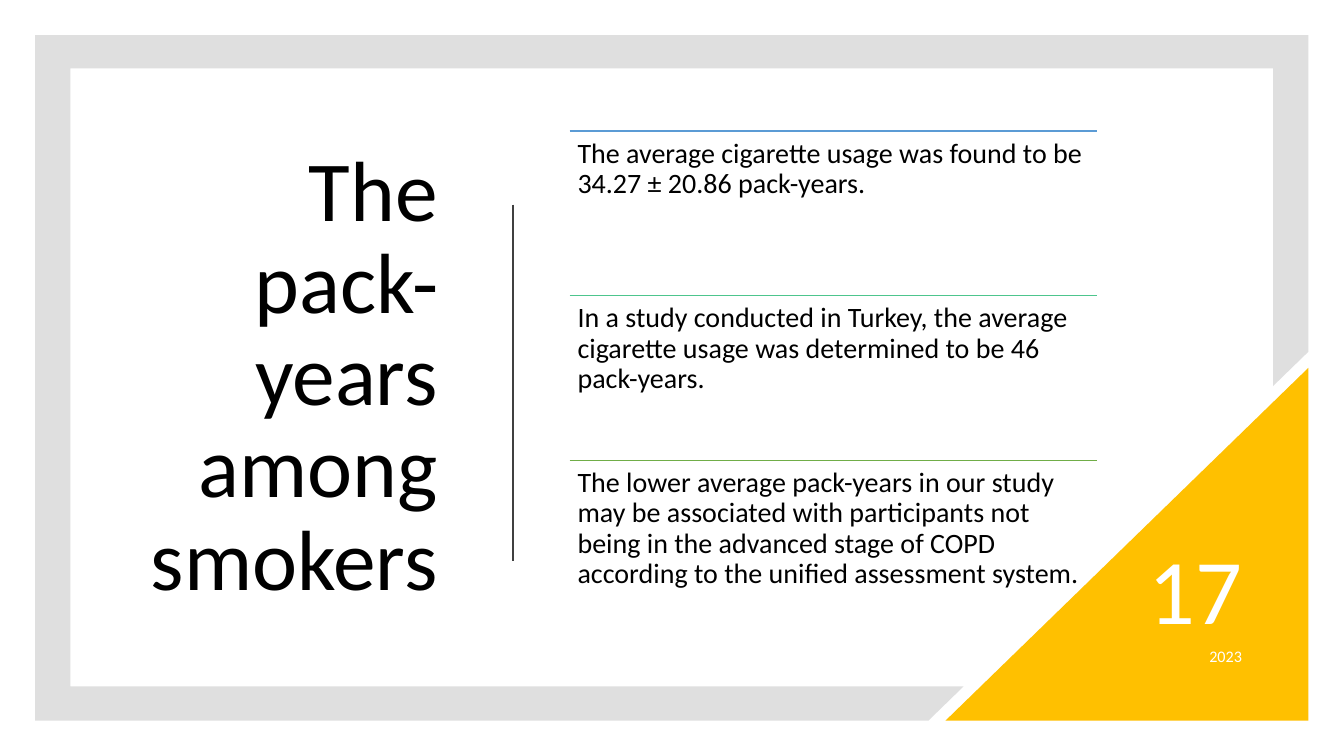
from pptx import Presentation, util as u
from pptx.dml.color import RGBColor
from pptx.enum import shapes, text
from pptx.oxml.ns import qn
from lxml import etree

CELL = u.Inches(0.1)
COLUMNS, ROWS = 133.33, 75


def cells(*counts):
    return [round(count * CELL) for count in counts]


def colour(code):
    return RGBColor.from_string(code)


class Deck:
    font = "Calibri"
    ink = "000000"
    paper = "FFFFFF"

    def __init__(self):
        self.file = Presentation()
        self.file.slide_width, self.file.slide_height = cells(COLUMNS, ROWS)
        self.slide = self.file.slides.add_slide(self.file.slide_layouts[6])

    def paint(self, shape, fill, opacity=100):
        shape.shadow.inherit = False
        shape.line.fill.background()
        shape.fill.solid()
        shape.fill.fore_color.rgb = colour(fill)
        if opacity < 100:
            tint = shape.fill._xPr.find(qn("a:solidFill"))[0]
            etree.SubElement(tint, qn("a:alpha")).set("val", str(opacity * 1000))

    def outline(self, points, fill, opacity):
        corners = [cells(*point) for point in points]
        builder = self.slide.shapes.build_freeform(*corners[0])
        builder.add_line_segments(corners[1:], close=True)
        self.paint(builder.convert_to_shape(), fill, opacity)

    def corner(self, left, top, width, height, fill):
        triangle = self.slide.shapes.add_shape(
            shapes.MSO_SHAPE.RIGHT_TRIANGLE, *cells(left, top, width, height))
        triangle._element.spPr.find(qn("a:xfrm")).set("flipH", "1")
        self.paint(triangle, fill)

    def rule(self, x1, y1, x2, y2, stroke, weight):
        line = self.slide.shapes.add_connector(
            shapes.MSO_CONNECTOR.STRAIGHT, *cells(x1, y1, x2, y2))
        line.line.color.rgb = colour(stroke)
        line.line.width = u.Pt(weight)
        etree.SubElement(line._element.spPr, qn("a:effectLst"))

    def words(self, content, left, top, width, height, size, ink=ink,
              align=text.PP_ALIGN.RIGHT, anchor=text.MSO_ANCHOR.MIDDLE,
              spacing=0.9, inset=None):
        frame = self.slide.shapes.add_textbox(
            *cells(left, top, width, height)).text_frame
        frame.word_wrap = True
        frame.vertical_anchor = anchor
        if inset is not None:
            frame.margin_left, frame.margin_top = cells(inset, inset)
            frame.margin_right, frame.margin_bottom = cells(inset, inset)
        frame.text = content
        paragraph = frame.paragraphs[0]
        paragraph.alignment = align
        paragraph.line_spacing = spacing
        font = paragraph.runs[0].font
        font.name, font.size = self.font, u.Pt(size)
        font.color.rgb = colour(ink)


FINDINGS = [
    ("5B9BD5", "The average cigarette usage was found to be "
               "34.27 ± 20.86 pack-years."),
    ("4DC58D", "In a study conducted in Turkey, the average cigarette usage "
               "was determined to be 46 pack-years."),
    ("70AD47", "The lower average pack-years in our study may be associated "
               "with participants not being in the advanced stage of COPD "
               "according to the unified assessment system."),
]


def main():
    deck = Deck()
    deck.outline([(3.5, 3.5), (129.8, 3.5), (129.8, 34.9), (126.3, 38.3),
                  (126.3, 6.8), (7, 6.8), (7, 68.1), (95.6, 68.1),
                  (92.1, 71.5), (3.5, 71.5)], "808080", 25)
    deck.corner(93.8, 36.5, 36, 35, "FFC000")

    body_top, body_height = 13, 49
    deck.words("The pack-years among smokers", 11, body_top, 33.4, body_height, 61)
    deck.rule(50.9, 20.3, 50.9, 55.7, "404040", 1.5)
    deck.words("2023", 99.5, 63.1, 24.7, 4, 11.5, deck.paper, spacing=1)
    deck.words("17", 105.9, 53.5, 18.3, 11, 66, deck.paper)

    left, width = 56.5, 52.3
    step = body_height / len(FINDINGS)
    for row, (stroke, finding) in enumerate(FINDINGS):
        top = body_top + row * step
        deck.rule(left, top, left + width, top, stroke, 1)
        deck.words(finding, left, top, width, step, 20,
                   align=text.PP_ALIGN.LEFT, anchor=text.MSO_ANCHOR.TOP, inset=0.8)

    deck.file.save("out.pptx")


if __name__ == "__main__":
    main()
